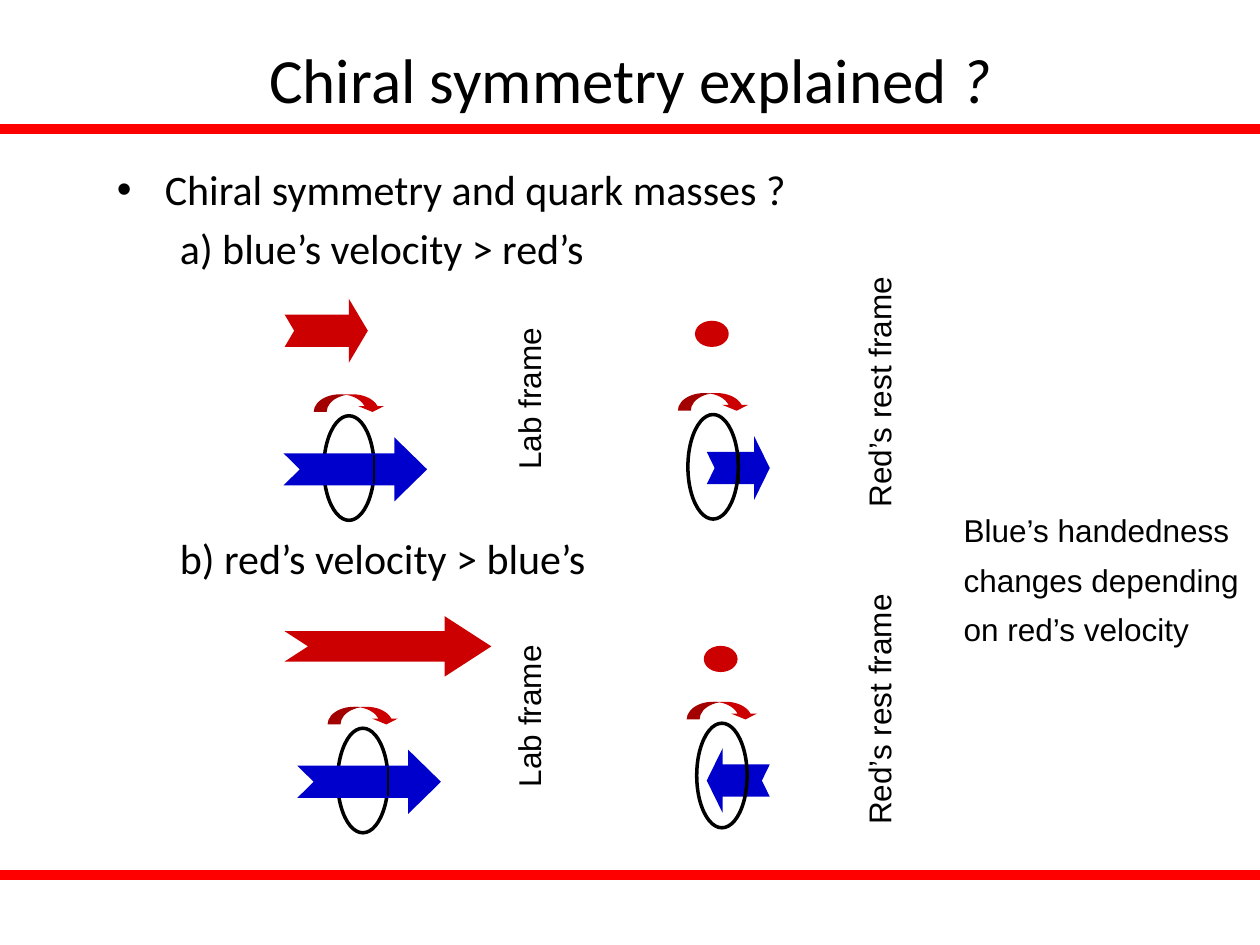
from pptx import Presentation
from pptx import util as u
from pptx.dml.color import RGBColor
from pptx.enum import shapes, text
from pptx.oxml import ns
from lxml import etree

PX = 9144  # EMU per px, at 100 px to the inch
WIDTH, HEIGHT = 1000, 750
BLACK = RGBColor(0, 0, 0)
RULE_RED = RGBColor(0xFF, 0, 0)
RED = RGBColor(0xCC, 0, 0)
BLUE = RGBColor(0, 0, 0xCC)
SHAPE = shapes.MSO_SHAPE


def px(*lengths):
    return [u.Emu(length * PX) for length in lengths]


def add_figure(page, kind, box, fill=None, line=None, adjust=()):
    figure = page.shapes.add_shape(kind, *px(*box))
    figure.shadow.inherit = False
    for index, value in enumerate(adjust):
        figure.adjustments[index] = value
    if fill is None:
        figure.fill.background()
    else:
        figure.fill.solid()
        figure.fill.fore_color.rgb = fill
    if line is None:
        figure.line.fill.background()
    else:
        figure.line.color.rgb = line
        figure.line.width = u.Pt(2)
    return figure


def style(para, font, size):
    for span in para.runs:
        span.font.name = font
        span.font.size = u.Pt(size)
        span.font.color.rgb = BLACK


def add_caption(page, box, words, rotated=False):
    caption = page.shapes.add_textbox(*px(*box))
    frame = caption.text_frame
    frame.text = words
    frame.word_wrap = not rotated
    frame.auto_size = text.MSO_AUTO_SIZE.SHAPE_TO_FIT_TEXT
    frame.paragraphs[0].line_spacing = 1.3
    style(frame.paragraphs[0], "Arial", 18)
    if rotated:
        caption.rotation = 270


def add_title(page, box):
    frame = page.shapes.add_textbox(*px(*box)).text_frame
    frame.word_wrap = True
    frame.vertical_anchor = text.MSO_ANCHOR.MIDDLE
    para = frame.paragraphs[0]
    para.alignment = text.PP_ALIGN.CENTER
    para.add_run().text = "Chiral symmetry explained "
    para.add_run().text = "?"
    style(para, "Calibri", 36)
    para.runs[1].font.italic = True


def add_points(page, box, points):
    """Each point is its words and whether it carries a bullet."""
    frame = page.shapes.add_textbox(*px(*box)).text_frame
    frame.word_wrap = True
    for index, (words, bulleted) in enumerate(points):
        para = frame.paragraphs[0] if index == 0 else frame.add_paragraph()
        para.text = words
        para.space_before = u.Pt(4.8)
        style(para, "Calibri", 24)
        margin, indent = px(38, -38) if bulleted else px(81, -31)
        properties = para._p.get_or_add_pPr()
        properties.set("marL", str(margin))
        properties.set("indent", str(indent))
        if bulleted:
            font = etree.SubElement(properties, ns.qn("a:buFont"))
            font.set("typeface", "Arial")
            bullet = etree.SubElement(properties, ns.qn("a:buChar"))
            bullet.set("char", "•")
        else:
            etree.SubElement(properties, ns.qn("a:buNone"))


def add_ring(page, left, top):
    add_figure(page, SHAPE.OVAL, (left, top, 40, 83), line=BLACK)


def add_spin(page, left, top):
    """Front edge of the ring and the turning arrow above it."""
    edge = page.shapes.add_connector(
        shapes.MSO_CONNECTOR.STRAIGHT,
        *px(left + 40, top + 31, left + 40, top + 54))
    edge.line.color.rgb = BLACK
    edge.line.width = u.Pt(1.5)
    etree.SubElement(edge._element.spPr, ns.qn("a:effectLst"))
    add_figure(page, SHAPE.CURVED_DOWN_ARROW, (left - 8, top - 17, 57, 14),
               RED, adjust=(0.734, 1.468, 0.333))


def add_lab_frame(page, left, top, red_size, red_head, ring):
    """Both quarks move; the blue one spins about its direction."""
    add_figure(page, SHAPE.NOTCHED_RIGHT_ARROW, (left, top, *red_size),
               RED, adjust=(0.5, red_head))
    ring_left, ring_top = left + ring[0], top + ring[1]
    add_ring(page, ring_left, ring_top)
    add_figure(page, SHAPE.NOTCHED_RIGHT_ARROW,
               (ring_left - 32, ring_top + 17, 114, 51), BLUE, adjust=(0.5, 0.511))
    add_spin(page, ring_left, ring_top)
    add_caption(page, (left + 118, top + 59, 133, 40), "Lab frame", True)


def add_rest_frame(page, left, top, dot, ring, blue_top, backward):
    """The red quark stands still; the blue one moves either way."""
    add_figure(page, SHAPE.OVAL, (left + dot[0], top + dot[1], 24, 18), RED, RED)
    blue = add_figure(page, SHAPE.NOTCHED_RIGHT_ARROW,
                      (left + 15, top + blue_top, 50, 51), BLUE, adjust=(0.5, 0.25))
    if backward:
        blue._element.spPr.get_or_add_xfrm().set("flipH", "1")
    ring_left, ring_top = left + ring[0], top + ring[1]
    add_ring(page, ring_left, ring_top)
    add_spin(page, ring_left, ring_top)
    add_caption(page, (left + 41, top + 54, 203, 40), "Red’s rest frame", True)


def main():
    deck = Presentation()
    deck.slide_width, deck.slide_height = px(WIDTH, HEIGHT)
    page = deck.slides.add_slide(deck.slide_layouts[6])

    # Red rules, title and text
    for top in (100, 692):
        add_figure(page, SHAPE.RECTANGLE, (0, top, WIDTH, 5), RULE_RED, RULE_RED)
    add_points(page, (83, 125, 850, 100), [
        ("Chiral symmetry and quark masses ?", True),
        ("a) blue’s velocity > red’s", False)])
    add_points(page, (83, 418, 850, 55), [("b) red’s velocity > blue’s", False)])
    add_title(page, (0, 0, WIDTH, 125))
    add_caption(page, (755, 392, 245, 100),
                "Blue’s handedness changes depending on red’s velocity")

    # Case a: blue is faster
    add_lab_frame(page, 226, 237, (66, 51), 0.296, (31, 93))
    add_rest_frame(page, 546, 237, (7, 19), (0, 92), 109, False)

    # Case b: red is faster
    add_lab_frame(page, 226, 489, (164, 48), 0.772, (42, 89))
    add_rest_frame(page, 546, 489, (14, 25), (7, 85), 105, True)

    deck.save("out.pptx")


if __name__ == "__main__":
    main()
